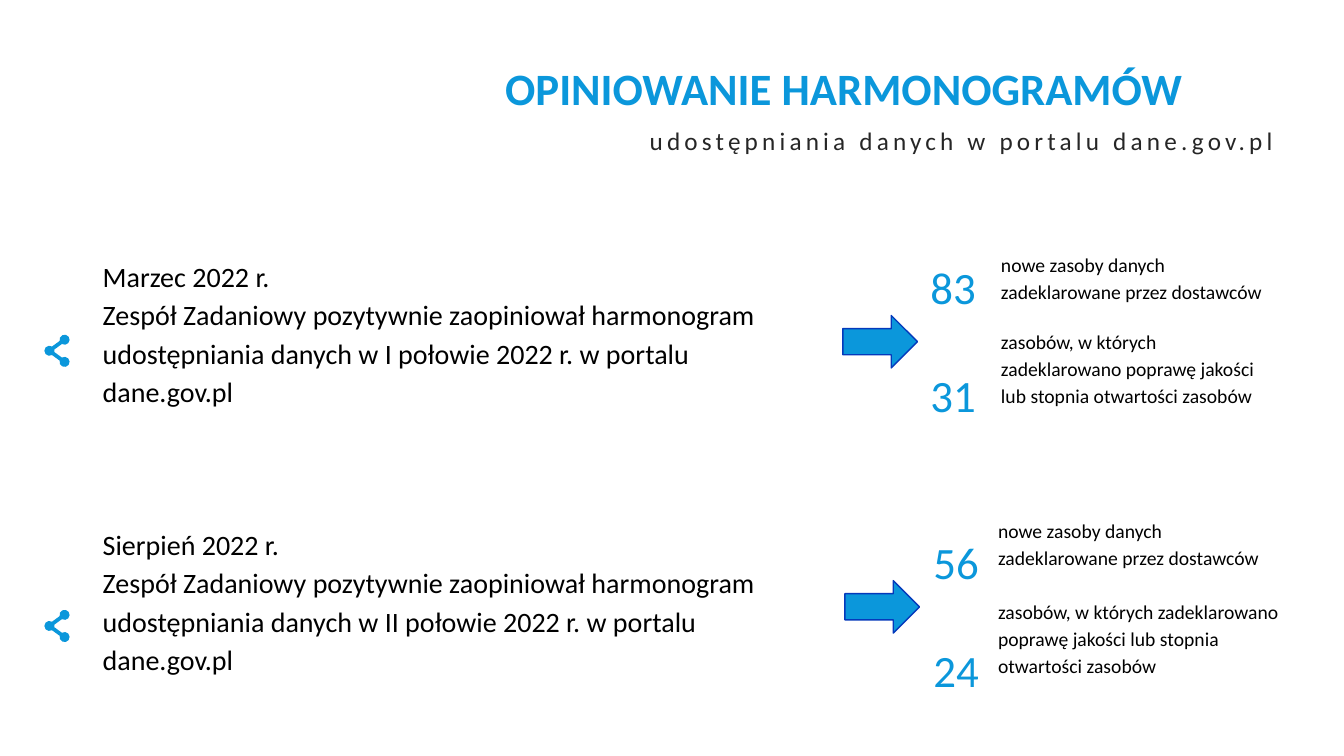
import math

import pptx
import pptx.dml.color
import pptx.enum.shapes
import pptx.enum.text
import pptx.util

Inches = pptx.util.Inches
Pt = pptx.util.Pt
ALIGN = pptx.enum.text.PP_ALIGN

FONT = "Calibri"
BLUE = "0B97DB"
NAVY = "0439BB"
BLACK = "000000"
GREY = "262626"

NEW_RESOURCES = "nowe zasoby danych zadeklarowane przez dostawców"
IMPROVED_RESOURCES = ("zasobów, w których zadeklarowano poprawę jakości "
                      "lub stopnia otwartości zasobów")

# Places of the parts are (left, top) from the corner of the period's box.
PERIODS = [
    {
        "box": (0.44, 2.43),
        "month": "Marzec 2022 r.", "half": "I", "counts": ("83", "31"),
        "icon_at": (0, 0.89), "arrow_at": (7.92, 0.7),
        "counts_at": (8.69, 0.1), "labels_at": (9.39, 0), "label_gap": 16.6,
    },
    {
        "box": (0.44, 5.07),
        "month": "Sierpień 2022 r.", "half": "II", "counts": ("56", "24"),
        "icon_at": (0, 0.98), "arrow_at": (7.94, 0.69),
        "counts_at": (8.72, 0.19), "labels_at": (9.36, 0), "label_gap": 19.3,
    },
]
LABELS_RIGHT = 12.79


def rgb(color):
    return pptx.dml.color.RGBColor.from_string(color)


def place(part, left, top, width, height):
    part.left, part.top = Inches(left), Inches(top)
    part.width, part.height = Inches(width), Inches(height)


def fill_text(frame, lines, size, color, bold=False, align=ALIGN.LEFT,
              spacing=1.0, gap=0, wrap=True):
    """Write one paragraph per line, with gap points between them."""
    frame.word_wrap = wrap
    frame.auto_size = pptx.enum.text.MSO_AUTO_SIZE.NONE
    frame.vertical_anchor = pptx.enum.text.MSO_ANCHOR.TOP
    for index, line in enumerate(lines):
        paragraph = frame.add_paragraph() if index else frame.paragraphs[0]
        paragraph.text = line
        paragraph.alignment = align
        paragraph.line_spacing = spacing
        paragraph.space_before = Pt(gap if index else 0)
        paragraph.font.name = FONT
        paragraph.font.size = Pt(size)
        paragraph.font.bold = bold
        paragraph.font.color.rgb = rgb(color)


def add_text(slide, box, lines, size, color, **style):
    frame = slide.shapes.add_textbox(*map(Inches, box)).text_frame
    fill_text(frame, lines, size, color, **style)
    return frame


def add_heading(slide, left, top):
    title, subtitle = slide.placeholders
    place(title, left, top, 7.88, 0.64)
    fill_text(title.text_frame, ["OPINIOWANIE HARMONOGRAMÓW"], 32, BLUE,
              bold=True, wrap=False)
    place(subtitle, left + 0.07, top + 0.64, 7.75, 0.4)
    fill_text(subtitle.text_frame, ["udostępniania danych w portalu dane.gov.pl"],
              18, GREY, align=ALIGN.RIGHT)
    for run in subtitle.text_frame.paragraphs[0].runs:
        run.font._element.set("spc", "300")


def add_statements(slide, left, top):
    lines = []
    for period in PERIODS:
        lines += [period["month"],
                  "Zespół Zadaniowy pozytywnie zaopiniował harmonogram udostępniania "
                  f"danych w {period['half']} połowie 2022 r. w portalu dane.gov.pl"]
    frame = add_text(slide, (left, top, 7.3, 4.83), lines, 20, BLACK, spacing=1.14)
    frame.margin_top = Inches(0.38)
    frame.paragraphs[2].space_before = Pt(82)


def add_share_icon(slide, left, top):
    """Draw three dots joined by two bars as a single outline."""
    radius = 0.05
    upper, hub, lower = (0.2, 0.05), (0.05, 0.16), (0.2, 0.27)
    slope = math.degrees(math.atan2(lower[1] - hub[1], lower[0] - hub[0]))
    half_bar = 22
    arcs = [
        (upper, slope + half_bar - 180, 180 - slope - half_bar, 8),
        (upper, 180 - slope - half_bar, 180 - slope - half_bar, 0),
        (hub, half_bar - slope, slope - half_bar, 1),
        (lower, slope + half_bar - 180, 180 - slope - half_bar, 8),
        (hub, slope + half_bar, 360 - slope - half_bar, 6),
    ]
    # Each dot's arc leaves out the opening where its bar joins.
    bar_to_upper, bar_to_lower = 180 - slope, 180 + slope
    arcs = [
        (upper, bar_to_upper + half_bar, bar_to_upper + 360 - half_bar, 8),
        (hub, half_bar - slope, slope - half_bar, 1),
        (lower, bar_to_lower + half_bar, bar_to_lower + 360 - half_bar, 8),
        (hub, slope + half_bar, 360 - slope - half_bar, 6),
    ]
    points = []
    for (x, y), start, end, steps in arcs:
        for step in range(steps + 1):
            angle = math.radians(start + (end - start) * step / steps)
            points.append((Inches(left + x + radius * math.cos(angle)),
                           Inches(top + y + radius * math.sin(angle))))
    builder = slide.shapes.build_freeform(*points[0])
    builder.add_line_segments(points[1:], close=True)
    icon = builder.convert_to_shape()
    icon.shadow.inherit = False
    icon.fill.solid()
    icon.fill.fore_color.rgb = rgb(BLUE)
    icon.line.fill.background()


def add_arrow(slide, left, top):
    arrow = slide.shapes.add_shape(
        pptx.enum.shapes.MSO_SHAPE.RIGHT_ARROW,
        *map(Inches, (left, top, 0.74, 0.52)))
    arrow.shadow.inherit = False
    arrow.fill.solid()
    arrow.fill.fore_color.rgb = rgb(BLUE)
    arrow.line.color.rgb = rgb(NAVY)
    arrow.line.width = Pt(1)


def add_period(slide, period):
    left, top = period["box"]

    def corner(part):
        dx, dy = period[part]
        return left + dx, top + dy

    add_share_icon(slide, *corner("icon_at"))
    add_arrow(slide, *corner("arrow_at"))
    add_text(slide, (*corner("counts_at"), 0.81, 1.72),
             period["counts"], 32, BLUE, gap=38.5)
    labels_left, labels_top = corner("labels_at")
    add_text(slide, (labels_left, labels_top, LABELS_RIGHT - labels_left, 2.25),
             [NEW_RESOURCES, IMPROVED_RESOURCES], 14, BLACK,
             spacing=1.14, gap=period["label_gap"])


def main():
    deck = pptx.Presentation()
    deck.slide_width, deck.slide_height = Inches(13.33), Inches(7.5)
    slide = deck.slides.add_slide(deck.slide_layouts[0])
    add_heading(slide, 4.91, 0.55)
    add_statements(slide, 0.92, 2.15)
    for period in PERIODS:
        add_period(slide, period)
    deck.save("out.pptx")


if __name__ == "__main__":
    main()
